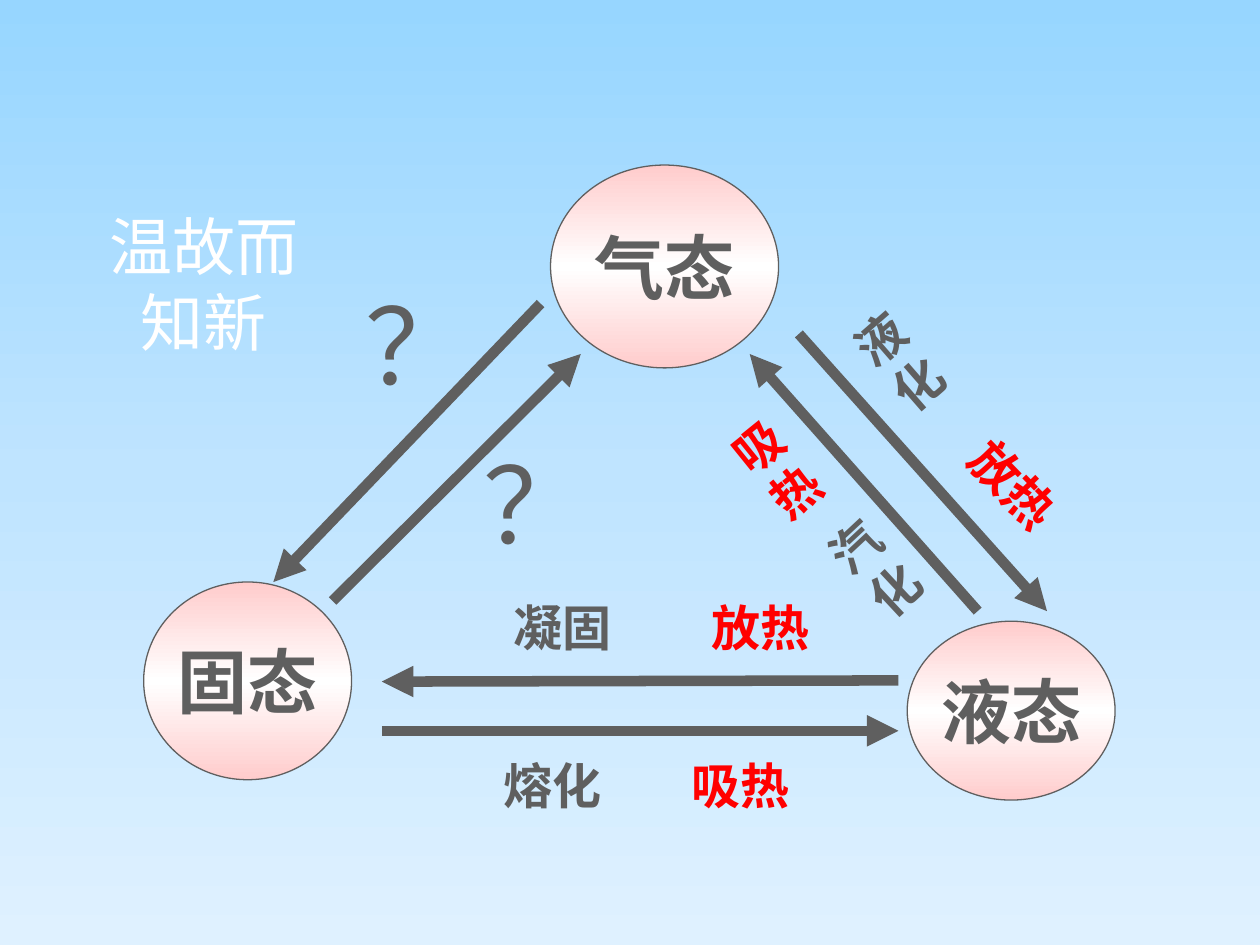
from copy import deepcopy

from pptx import Presentation
from pptx.dml.color import RGBColor
from pptx.enum.shapes import MSO_CONNECTOR, MSO_SHAPE
from pptx.enum.text import MSO_ANCHOR, MSO_AUTO_SIZE, PP_ALIGN
from pptx.oxml.ns import qn
from pptx.oxml.xmlchemy import OxmlElement
from pptx.util import Pt

GRAY = RGBColor(0x5F, 0x5F, 0x5F)
RED = RGBColor(0xFF, 0x00, 0x00)
WHITE = RGBColor(0xFF, 0xFF, 0xFF)
PINK = RGBColor(0xFF, 0xCC, 0xCC)
SKY = RGBColor(0x97, 0xD6, 0xFF)
LIGHT_SKY = RGBColor(0xBF, 0xE4, 0xFF)
PALE_SKY = RGBColor(0xDF, 0xF1, 0xFF)

STATES = [
    ("气态", (314.6, 94.3, 130.3, 115.9)),
    ("固态", (82.1, 332.6, 118.8, 113)),
    ("液态", (518.4, 355, 118.8, 102.2)),
]
ARROWS = [
    (218.2, 417.6, 513.4, 417.6),
    (513.4, 388.8, 218.2, 389.5),
    (190.1, 343.4, 331.9, 202.3),
    (308.9, 173.5, 156.2, 332.6),
    (558.7, 349.2, 428.4, 202.3),
    (456.5, 190.8, 598.3, 349.2),
]
LABELS = [
    ("凝固", (286.6, 337.7, 79.9, 41), 0, GRAY),
    ("熔化", (280.8, 428.4, 76.3, 41), 0, GRAY),
    ("液\n化", (496.1, 167.8, 42.5, 85), 319, GRAY),
    ("汽化", (478.8, 287.3, 42.5, 74.2), 317, GRAY),
    ("吸热", (388.1, 428.4, 80.6, 41), 0, RED),
    ("吸热", (422.6, 230.4, 42.5, 74.2), 321, RED),
    ("放热", (399.6, 337.7, 90.7, 41), 0, RED),
    ("放热", (541.4, 262.1, 86.4, 41), 46, RED),
]
QUESTIONS = [(201.6, 157, 52.6, 79.2), (269.3, 247.7, 32.4, 79.2)]


def points(values):
    return [Pt(value) for value in values]


def set_gradient(fill, element, colors):
    fill.gradient()
    fill.gradient_angle = 270
    stop_list = next(element.iter(qn("a:gsLst")))
    stop_list.insert(1, deepcopy(stop_list[0]))
    for stop, position, color in zip(fill.gradient_stops, (0, 0.5, 1), colors):
        stop.position = position
        stop.color.rgb = color


def set_text(frame, text, size, color, name="Arial", bold=False, align=None):
    frame.text = text
    for paragraph in frame.paragraphs:
        paragraph.alignment = align
        font = paragraph.font
        font.name, font.size, font.bold = name, Pt(size), bold
        font.color.rgb = color


def add_state(slide, text, box):
    shape = slide.shapes.add_shape(MSO_SHAPE.OVAL, *points(box))
    shape.shadow.inherit = False
    set_gradient(shape.fill, shape.element, (PINK, WHITE, PINK))
    shape.line.color.rgb = GRAY
    shape.line.width = Pt(0.75)
    frame = shape.text_frame
    frame.word_wrap = False
    frame.vertical_anchor = MSO_ANCHOR.MIDDLE
    set_text(frame, text, 40, GRAY, "Times New Roman", True, PP_ALIGN.CENTER)


def add_arrow(slide, ends):
    arrow = slide.shapes.add_connector(MSO_CONNECTOR.STRAIGHT, *points(ends))
    arrow.line.color.rgb = GRAY
    arrow.line.width = Pt(6)
    head = OxmlElement("a:tailEnd")
    head.set("type", "triangle")
    arrow.line._get_or_add_ln().append(head)
    arrow.element.spPr.append(OxmlElement("a:effectLst"))


def add_label(slide, text, box, rotation, color, size=28, bold=True):
    shape = slide.shapes.add_textbox(*points(box))
    shape.rotation = rotation
    frame = shape.text_frame
    frame.word_wrap = True
    frame.auto_size = MSO_AUTO_SIZE.SHAPE_TO_FIT_TEXT
    set_text(frame, text, size, color, bold=bold)


def add_title(slide, text, box):
    frame = slide.shapes.add_textbox(*points(box)).text_frame
    frame.word_wrap = False
    set_text(frame, text, 36, WHITE, "Noto Sans CJK SC", align=PP_ALIGN.CENTER)


def add_cycle(slide):
    for text, box in STATES:
        add_state(slide, text, box)
    for ends in ARROWS:
        add_arrow(slide, ends)
    for text, box, rotation, color in LABELS:
        add_label(slide, text, box, rotation, color)
    for box in QUESTIONS:
        add_label(slide, "？", box, 0, GRAY, size=60, bold=False)


def main():
    presentation = Presentation()
    presentation.slide_width, presentation.slide_height = Pt(720), Pt(540)
    slide = presentation.slides.add_slide(presentation.slide_layouts[6])
    set_gradient(slide.background.fill, slide.element, (SKY, LIGHT_SKY, PALE_SKY))
    add_cycle(slide)
    add_title(slide, "温故而知新", (42.5, 115.2, 147.6, 73.4))
    presentation.save("out.pptx")


if __name__ == "__main__":
    main()
